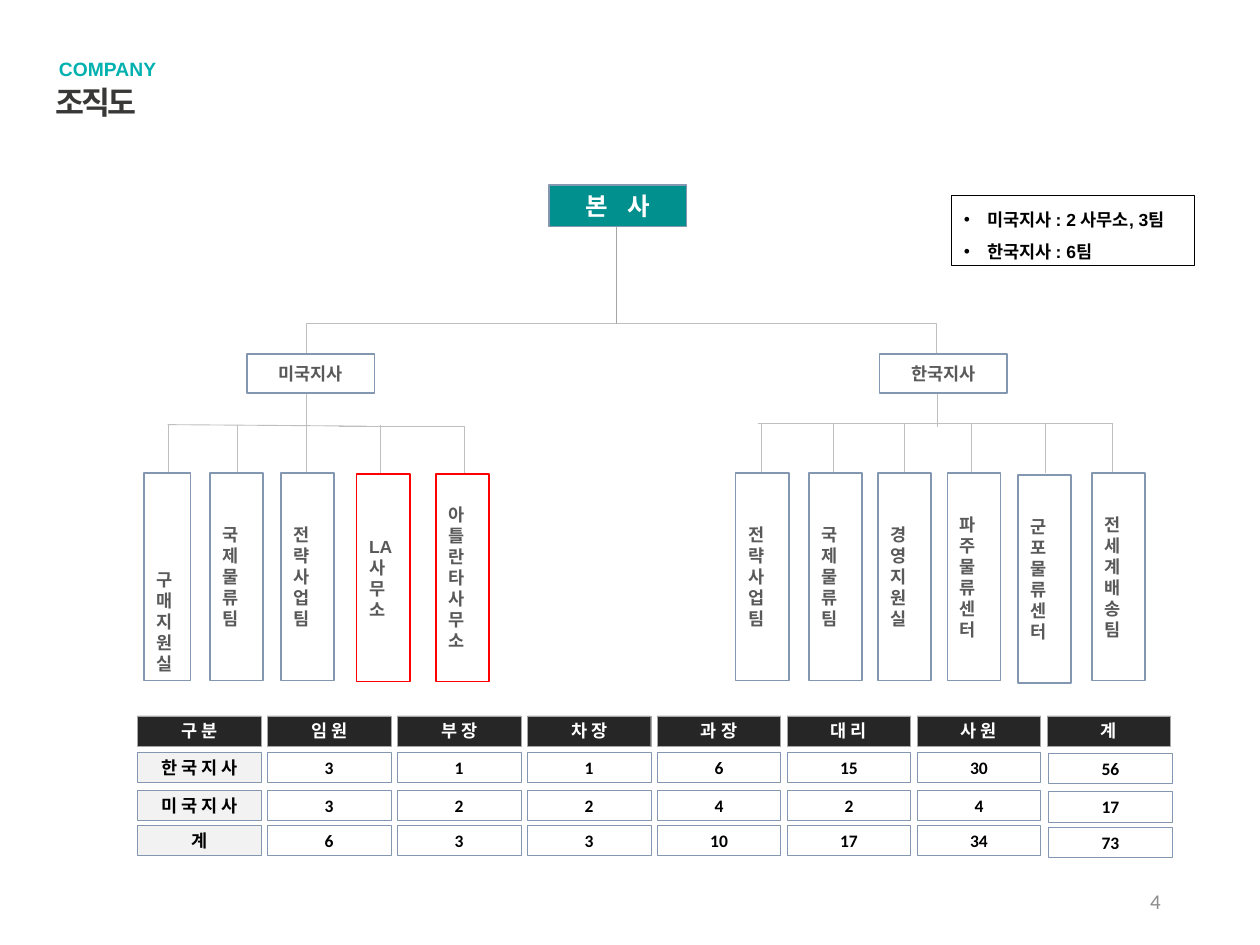
from lxml.etree import SubElement
from pptx import Presentation
from pptx.dml.color import RGBColor
from pptx.enum.shapes import MSO_CONNECTOR, MSO_SHAPE
from pptx.enum.text import MSO_ANCHOR, PP_ALIGN
from pptx.oxml.ns import qn
from pptx.util import Cm, Pt

WHITE = RGBColor(0xFF, 0xFF, 0xFF)
BLACK = RGBColor(0x00, 0x00, 0x00)
RED = RGBColor(0xFF, 0x00, 0x00)
TEAL = RGBColor(0x01, 0x90, 0x8D)
BRIGHT_TEAL = RGBColor(0x01, 0xB1, 0xAF)
BLUE_GRAY = RGBColor(0x84, 0x97, 0xB0)
TITLE_GRAY = RGBColor(0x38, 0x38, 0x36)
TEXT_GRAY = RGBColor(0x59, 0x59, 0x59)
PAGE_GRAY = RGBColor(0x8C, 0x8C, 0x8C)
HEADER_GRAY = RGBColor(0x26, 0x26, 0x26)
LABEL_GRAY = RGBColor(0xF2, 0xF2, 0xF2)
STEM_GRAY = RGBColor(0xA6, 0xA6, 0xA6)
LINE_GRAY = RGBColor(0xBF, 0xBF, 0xBF)


def write_text(shape, lines, color, size=10, name="Arial", bold=True,
               alignment=PP_ALIGN.CENTER, anchor=MSO_ANCHOR.MIDDLE, line_spacing=None, spacing=0):
    frame = shape.text_frame
    frame.word_wrap = True
    frame.vertical_anchor = anchor
    frame.text = "\n".join(lines)
    for paragraph in frame.paragraphs:
        for attribute, value in {"alignment": alignment, "line_spacing": line_spacing}.items():
            setattr(paragraph, attribute, value)
        run = paragraph.runs[0]
        for attribute, value in {"name": name, "size": Pt(size), "bold": bold}.items():
            setattr(run.font, attribute, value)
        run.font.color.rgb = color
        if spacing:
            run.font._element.set("spc", str(spacing))


def add_box(left, top, width, height, fill=WHITE, line=BLUE_GRAY, line_width=1):
    shape = slide.shapes.add_shape(MSO_SHAPE.RECTANGLE, Cm(left), Cm(top), Cm(width), Cm(height))
    shape.shadow.inherit = False
    shape.fill.solid()
    shape.fill.fore_color.rgb = fill
    shape.line.color.rgb = line
    shape.line.width = Pt(line_width)
    return shape


presentation = Presentation()
presentation.slide_width = Cm(25.4)
presentation.slide_height = Cm(19.05)
slide = presentation.slides.add_slide(presentation.slide_layouts[6])

captions = [
    ((17.93, 17.65, 5.72, 1.02), "4", {
        "color": PAGE_GRAY, "size": 12, "name": "Calibri", "bold": False,
        "alignment": PP_ALIGN.RIGHT}),
    ((0.94, 0.79, 4.98, 0.86), "COMPANY", {
        "color": BRIGHT_TEAL, "size": 11, "alignment": PP_ALIGN.LEFT,
        "anchor": MSO_ANCHOR.TOP, "line_spacing": 1.5}),
    ((0.86, 1.55, 19.1, 1.02), "조직도", {
        "color": TITLE_GRAY, "size": 18, "alignment": PP_ALIGN.LEFT,
        "anchor": MSO_ANCHOR.TOP, "spacing": -150}),
]
for place, text, text_format in captions:
    write_text(slide.shapes.add_textbox(*map(Cm, place)), [text], **text_format)

elbows = [
    [(11.48, 6.53), (6.17, 6.53), (6.17, 7.75)],
    [(11.28, 6.53), (18.87, 6.53), (18.87, 7.75)],
    [(6.83, 8.59), (9.37, 8.59), (9.37, 9.53)],
]
for points in elbows:
    start, *rest = [(Cm(x), Cm(y)) for x, y in points]
    builder = slide.shapes.build_freeform(*start)
    builder.add_line_segments(rest, close=False)
    elbow = builder.convert_to_shape()
    elbow.shadow.inherit = False
    elbow.fill.background()
    elbow.line.color.rgb = LINE_GRAY
    elbow.line.width = Pt(0.5)

lines = [
    (12.42, 4.14, 12.42, 6.53, STEM_GRAY),
    (6.17, 7.92, 6.17, 9.7, LINE_GRAY),
    (18.9, 7.92, 18.9, 8.61, LINE_GRAY),
    (7.39, 8.59, 3.38, 8.56, LINE_GRAY),
    (22.43, 8.53, 15.29, 8.53, LINE_GRAY),
]
lines += [(x, 8.56, x, 9.55, LINE_GRAY) for x in (3.4, 4.78, 7.67)]
lines += [(x, 8.53, x, 9.53, LINE_GRAY) for x in (15.34, 16.81, 18.24, 19.58, 21.08, 22.43)]
for *ends, color in lines:
    connector = slide.shapes.add_connector(MSO_CONNECTOR.STRAIGHT, *map(Cm, ends))
    connector.line.color.rgb = color
    connector.line.width = Pt(0.5)
    SubElement(connector._element.spPr, qn("a:effectLst"))

headquarters = add_box(11.07, 3.73, 2.77, 0.84, fill=TEAL)
write_text(headquarters, ["본 사"], WHITE, size=14, spacing=390)
for left, branch in ((4.98, "미국지사"), (17.73, "한국지사")):
    write_text(add_box(left, 7.14, 2.57, 0.79), [branch], TEXT_GRAY)

teams = [
    (2.9, 9.53, 0.94, "구매지원실", BLUE_GRAY, MSO_ANCHOR.BOTTOM),
    (4.24, 9.53, 1.07, "국제물류팀", BLUE_GRAY, MSO_ANCHOR.MIDDLE),
    (5.66, 9.53, 1.07, "전략사업팀", BLUE_GRAY, MSO_ANCHOR.MIDDLE),
    (7.19, 9.55, 1.07, "LA사무소", RED, MSO_ANCHOR.MIDDLE),
    (8.79, 9.55, 1.07, "아틀란타사무소", RED, MSO_ANCHOR.MIDDLE),
    (14.83, 9.53, 1.07, "전략사업팀", BLUE_GRAY, MSO_ANCHOR.MIDDLE),
    (16.31, 9.53, 1.07, "국제물류팀", BLUE_GRAY, MSO_ANCHOR.MIDDLE),
    (17.7, 9.53, 1.07, "경영지원실", BLUE_GRAY, MSO_ANCHOR.MIDDLE),
    (19.1, 9.53, 1.07, "파주물류센터", BLUE_GRAY, MSO_ANCHOR.MIDDLE),
    (20.52, 9.58, 1.07, "군포물류센터", BLUE_GRAY, MSO_ANCHOR.MIDDLE),
    (22.02, 9.53, 1.07, "전세계배송팀", BLUE_GRAY, MSO_ANCHOR.MIDDLE),
]
for left, top, width, team, line, anchor in teams:
    team_box = add_box(left, top, width, 4.19, line=line)
    write_text(team_box, [team], TEXT_GRAY, alignment=PP_ALIGN.JUSTIFY, anchor=anchor)
    team_box.text_frame._txBody.bodyPr.set("vert", "wordArtVertRtl")

summary = add_box(19.18, 3.94, 4.9, 1.4, line=BLACK, line_width=0.25)
write_text(summary, ["미국지사 : 2 사무소, 3팀", "한국지사 : 6팀"], BLACK,
           alignment=PP_ALIGN.JUSTIFY, line_spacing=1.5)
for paragraph in summary.text_frame.paragraphs:
    properties = paragraph._p.get_or_add_pPr()
    properties.set("marL", str(Cm(0.48)))
    properties.set("indent", str(-Cm(0.48)))
    SubElement(properties, qn("a:buFont")).set("typeface", "Arial")
    SubElement(properties, qn("a:buChar")).set("char", "•")

headcount = [
    (14.43, ["구 분", "임 원", "부 장", "차 장", "과 장", "대 리", "사 원", "계"]),
    (15.16, ["한 국 지 사", "3", "1", "1", "6", "15", "30", "56"]),
    (15.93, ["미 국 지 사", "3", "2", "2", "4", "2", "4", "17"]),
    (16.64, ["계", "6", "3", "3", "10", "17", "34", "73"]),
]
for row, (top, values) in enumerate(headcount):
    for column, value in enumerate(values):
        shift = 0.03 if row and column == 7 else 0
        fill = HEADER_GRAY if row == 0 else LABEL_GRAY if column == 0 else WHITE
        cell = add_box(2.77 + 2.62 * column + shift, top + shift, 2.49, 0.61, fill=fill,
                       line=BLUE_GRAY if row else STEM_GRAY, line_width=0.25)
        write_text(cell, [value], BLACK if row else WHITE, name="Calibri")

presentation.save("out.pptx")
